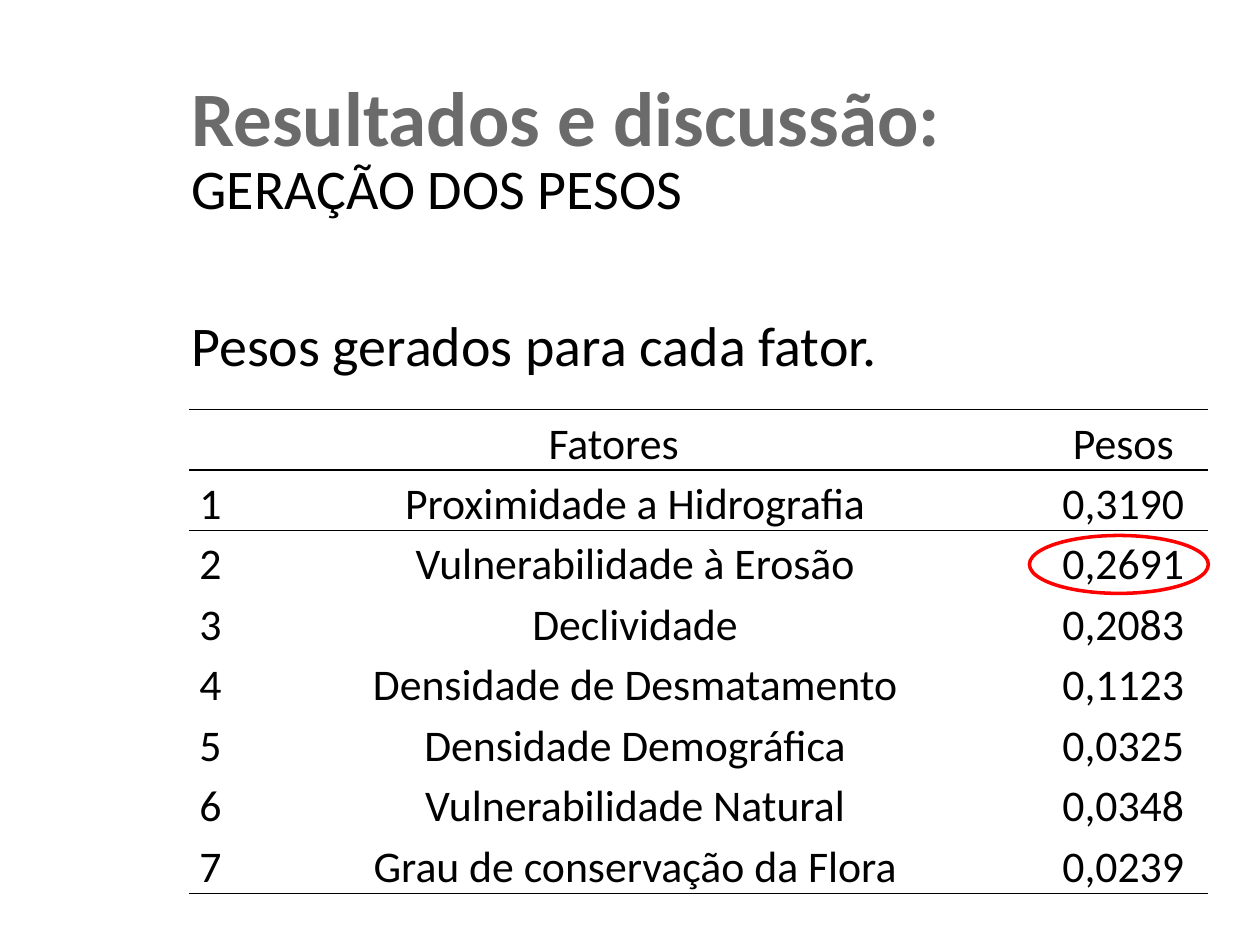
from typing import NamedTuple

from lxml.etree import SubElement
from pptx import Presentation
from pptx.dml.color import RGBColor
from pptx.enum.shapes import MSO_SHAPE
from pptx.enum.text import MSO_ANCHOR, PP_ALIGN
from pptx.oxml.ns import qn
from pptx.util import Inches, Pt

BLACK, GREY, RED = "000000", "6B6B6B", "FF0000"
NO_GRID_STYLE = "{2D5ABB26-0587-4C30-8999-92F81FD0307C}"


class Factor(NamedTuple):
    name: str
    weight: str


FACTORS = [
    Factor("Proximidade a Hidrografia", "0,3190"),
    Factor("Vulnerabilidade à Erosão", "0,2691"),
    Factor("Declividade", "0,2083"),
    Factor("Densidade de Desmatamento", "0,1123"),
    Factor("Densidade Demográfica", "0,0325"),
    Factor("Vulnerabilidade Natural", "0,0348"),
    Factor("Grau de conservação da Flora", "0,0239"),
]
COLUMN_WIDTHS = [0.34, 6.4, 1.35]


def color(value: str) -> RGBColor:
    return RGBColor.from_string(value)


def write(paragraph, text: str, *, size: float, fill: str = BLACK, bold: bool = False,
          align=PP_ALIGN.LEFT, before: float = 0, spacing: float = 1.0) -> None:
    paragraph.alignment = align
    paragraph.space_before = Pt(before)
    paragraph.line_spacing = spacing
    run = paragraph.add_run()
    run.text = text
    run.font.name = "Calibri"
    run.font.size = Pt(size)
    run.font.bold = bold
    run.font.color.rgb = color(fill)


def add_text_frame(slide, left: float, top: float, width: float, height: float, anchor):
    box = slide.shapes.add_textbox(Inches(left), Inches(top), Inches(width), Inches(height))
    frame = box.text_frame
    frame.word_wrap = True
    frame.vertical_anchor = anchor
    return frame


def add_border(cell, side: str) -> None:
    line = SubElement(cell._tc.get_or_add_tcPr(), qn(f"a:{side}"), w=str(Pt(1)))
    SubElement(SubElement(line, qn("a:solidFill")), qn("a:srgbClr"), val=BLACK)


def format_cell(cell, text: str, borders: list[str]) -> None:
    cell.margin_left = cell.margin_right = Inches(0.05)
    cell.margin_top = cell.margin_bottom = 0
    cell.vertical_anchor = MSO_ANCHOR.BOTTOM
    for side in borders:
        add_border(cell, side)
    cell.fill.background()
    write(cell.text_frame.paragraphs[0], text, size=25, align=PP_ALIGN.CENTER, spacing=1.15)


def add_weights_table(slide) -> None:
    rows = [("Fatores", "", "Pesos")]
    rows += [(str(number), *factor) for number, factor in enumerate(FACTORS, 1)]
    frame = slide.shapes.add_table(len(rows), len(COLUMN_WIDTHS), Inches(1.5), Inches(3.25),
                                   Inches(sum(COLUMN_WIDTHS)), Inches(0.48 * len(rows)))
    table = frame.table
    table.first_row = table.horz_banding = False
    table._tbl.tblPr.find(qn("a:tableStyleId")).text = NO_GRID_STYLE
    for column, width in zip(table.columns, COLUMN_WIDTHS):
        column.width = Inches(width)
    # Rules above and below the header, and below the last row
    borders = {0: ["lnT", "lnB"], 1: ["lnT"], len(rows) - 1: ["lnB"]}
    for row_index, row in enumerate(rows):
        for column_index, text in enumerate(row):
            format_cell(table.cell(row_index, column_index), text, borders.get(row_index, []))
    table.cell(0, 0).merge(table.cell(0, 1))


def add_highlight(slide) -> None:
    ellipse = slide.shapes.add_shape(MSO_SHAPE.OVAL, Inches(8.17), Inches(4.25),
                                     Inches(1.42), Inches(0.46))
    ellipse.shadow.inherit = False
    ellipse.fill.background()
    ellipse.line.color.rgb = color(RED)
    ellipse.line.width = Pt(2)


def main() -> None:
    presentation = Presentation()
    presentation.slide_width, presentation.slide_height = Inches(10), Inches(7.5)
    slide = presentation.slides.add_slide(presentation.slide_layouts[6])

    # Subtitle and table caption
    body = add_text_frame(slide, 1.42, 1.17, 8.42, 6.58, MSO_ANCHOR.TOP)
    write(body.paragraphs[0], "GERAÇÃO DOS PESOS", size=32, align=PP_ALIGN.JUSTIFY)
    write(body.add_paragraph(), "Pesos gerados para cada fator.", size=32,
          align=PP_ALIGN.JUSTIFY, before=51)

    # Title
    title = add_text_frame(slide, 1.42, 0.5, 8.08, 0.83, MSO_ANCHOR.MIDDLE)
    write(title.paragraphs[0], "Resultados e discussão:", size=44, fill=GREY, bold=True)

    # Table of weights with one value circled
    add_weights_table(slide)
    add_highlight(slide)

    presentation.save("out.pptx")


if __name__ == "__main__":
    main()
